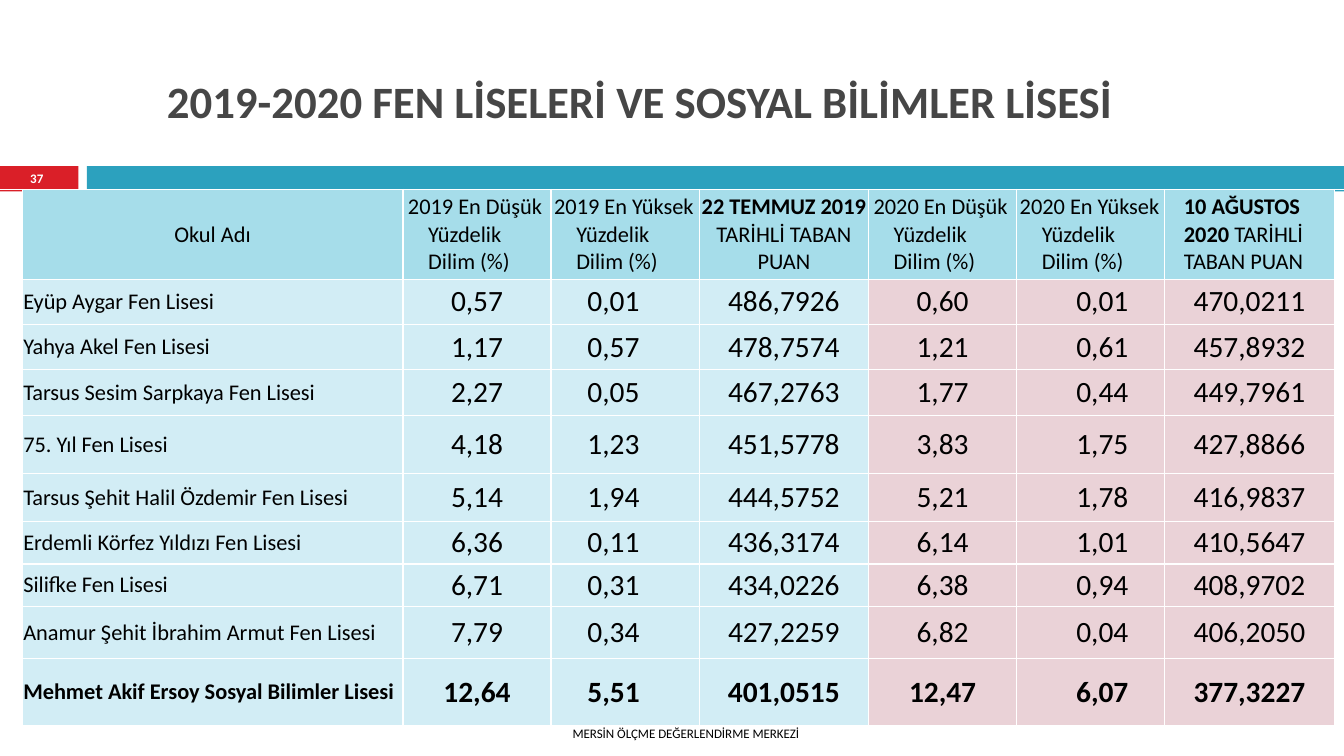
from lxml import etree
from pptx import Presentation
from pptx.dml.color import RGBColor
from pptx.enum.shapes import MSO_SHAPE
from pptx.enum.text import MSO_ANCHOR, PP_ALIGN
from pptx.oxml.ns import qn
from pptx.util import Pt

LEFT, CENTER, RIGHT = PP_ALIGN.LEFT, PP_ALIGN.CENTER, PP_ALIGN.RIGHT


def color(value):
    return RGBColor.from_string(value)


def write(frame, text, size, ink="000000", align=LEFT):
    """Fill a frame; in each line, the part before a bar is bold."""
    para = frame.paragraphs[0]
    para.alignment = align
    for number, line in enumerate(text.split("\n")):
        if number:
            para.add_line_break()
        strong, _, plain = line.rpartition("|")
        for part, bold in ((strong, True), (plain, False)):
            if part:
                span = para.add_run()
                span.text = part
                span.font.name = "Calibri"
                span.font.size = Pt(size)
                span.font.bold = bold
                span.font.color.rgb = color(ink)
    return para


deck = Presentation()
deck.slide_width, deck.slide_height = Pt(960), Pt(540)
page = deck.slides.add_slide(deck.slide_layouts[6])

# Red and blue band
for left, width, fill in ((0, 56, "DA1F28"), (62, 898, "2CA1BE")):
    bar = page.shapes.add_shape(MSO_SHAPE.RECTANGLE, Pt(left), Pt(118.6), Pt(width), Pt(18.2))
    bar.shadow.inherit = False
    bar.fill.solid()
    bar.fill.fore_color.rgb = color(fill)
    bar.line.fill.background()

# Title, page number and footer
texts = [
    (119.2, 49.7, 677.5, 40.3, 2.8, "2019-2020 FEN LİSELERİ VE SOSYAL BİLİMLER LİSESİ|", 32, "464646"),
    (21.6, 119.5, 12.4, 12.4, 2.5, "37|", 9.3, "FFFFFF"),
    (409, 518, 165.6, 10.1, 0, "MERSİN ÖLÇME DEĞERLENDİRME MERKEZİ", 9.3, "000000"),
]
for left, top, width, height, inset, text, size, ink in texts:
    box = page.shapes.add_textbox(Pt(left), Pt(top), Pt(width), Pt(height))
    frame = box.text_frame
    frame.word_wrap = False
    frame.margin_left = frame.margin_right = frame.margin_bottom = 0
    frame.margin_top = Pt(inset)
    write(frame, text, size, ink).line_spacing = 1.0

# Table contents
headers = [
    "Okul Adı",
    "2019 En Düşük\nYüzdelik\nDilim (%)",
    "2019 En Yüksek\nYüzdelik\nDilim (%)",
    "22 TEMMUZ 2019|\nTARİHLİ TABAN\nPUAN",
    "2020 En Düşük\nYüzdelik\nDilim (%)",
    "2020 En Yüksek\nYüzdelik\nDilim (%)",
    "10 AĞUSTOS|\n2020 |TARİHLİ\nTABAN PUAN",
]
schools = [
    ("Eyüp Aygar Fen Lisesi", "0,57", "0,01", "486,7926", "0,60", "0,01", "470,0211"),
    ("Yahya Akel Fen Lisesi", "1,17", "0,57", "478,7574", "1,21", "0,61", "457,8932"),
    ("Tarsus Sesim Sarpkaya Fen Lisesi", "2,27", "0,05", "467,2763", "1,77", "0,44", "449,7961"),
    ("75. Yıl Fen Lisesi", "4,18", "1,23", "451,5778", "3,83", "1,75", "427,8866"),
    ("Tarsus Şehit Halil Özdemir Fen Lisesi", "5,14", "1,94", "444,5752", "5,21", "1,78", "416,9837"),
    ("Erdemli Körfez Yıldızı Fen Lisesi", "6,36", "0,11", "436,3174", "6,14", "1,01", "410,5647"),
    ("Silifke Fen Lisesi", "6,71", "0,31", "434,0226", "6,38", "0,94", "408,9702"),
    ("Anamur Şehit İbrahim Armut Fen Lisesi", "7,79", "0,34", "427,2259", "6,82", "0,04", "406,2050"),
    ("Mehmet Akif Ersoy Sosyal Bilimler Lisesi", "12,64", "5,51", "401,0515", "12,47", "6,07", "377,3227"),
]
widths = [13, 272, 105.8, 105.8, 121, 105.8, 105.8, 121, 13]
heights = [64, 32.4, 32.4, 32.4, 41.6, 34.4, 30.3, 30.3, 37.4, 48]
header_aligns = [CENTER, LEFT, LEFT, CENTER, LEFT, LEFT, LEFT]
header_indents = [None, (18, -14.4), (18, -15.8), None, (18, -14.4), (18, -15.8), (13.7, 0)]
body_aligns = [LEFT, CENTER, LEFT, CENTER, CENTER, RIGHT, CENTER]

# Table grid
table = page.shapes.add_table(
    len(heights), len(widths), Pt(-1.4), Pt(135.4), Pt(sum(widths)), Pt(sum(heights))
).table
table.first_row = table.horz_banding = False
for column, width in zip(table.columns, widths):
    column.width = Pt(width)
for row, height in zip(table.rows, heights):
    row.height = Pt(height)

# Table cells
for r, values in enumerate([headers] + schools):
    for c, text in enumerate(values):
        cell = table.cell(r, c + 1)
        cell.vertical_anchor = MSO_ANCHOR.MIDDLE
        cell.margin_left = cell.margin_right = cell.margin_top = cell.margin_bottom = 0
        cell.fill.solid()
        if r == 0:
            cell.fill.fore_color.rgb = color("A6DDEA")
            para = write(cell.text_frame, text, 16, align=header_aligns[c])
            if header_indents[c]:
                margin, indent = header_indents[c]
                properties = para._p.get_or_add_pPr()
                properties.set("marL", str(Pt(margin)))
                properties.set("indent", str(Pt(indent)))
            continue
        cell.fill.fore_color.rgb = color("D2EDF5" if c < 4 else "EAD2D7")
        if c == 0:
            cell.margin_left = Pt(0.8)
        elif c == 2:
            cell.margin_left = Pt(26)
        elif c == 5:
            cell.margin_right = Pt(26)
        if r == len(schools):
            text += "|"
        write(cell.text_frame, text, 16 if c == 0 else 21, align=body_aligns[c])

# Empty side columns and white borders
last_row, last_column = len(heights) - 1, len(widths) - 1
for c in (0, last_column):
    for r in range(len(heights)):
        table.cell(r, c).fill.background()
    table.cell(0, c).merge(table.cell(last_row, c))
for r in range(len(heights)):
    for c in range(len(widths)):
        sides = {0: ["a:lnR"], last_column: ["a:lnL"]}.get(c, ["a:lnL", "a:lnR", "a:lnT", "a:lnB"])
        properties = table.cell(r, c)._tc.get_or_add_tcPr()
        for position, side in enumerate(sides):
            line = etree.Element(qn(side), w=str(Pt(1)))
            fill = etree.SubElement(line, qn("a:solidFill"))
            etree.SubElement(fill, qn("a:srgbClr"), val="FFFFFF")
            properties.insert(position, line)

deck.save("out.pptx")
